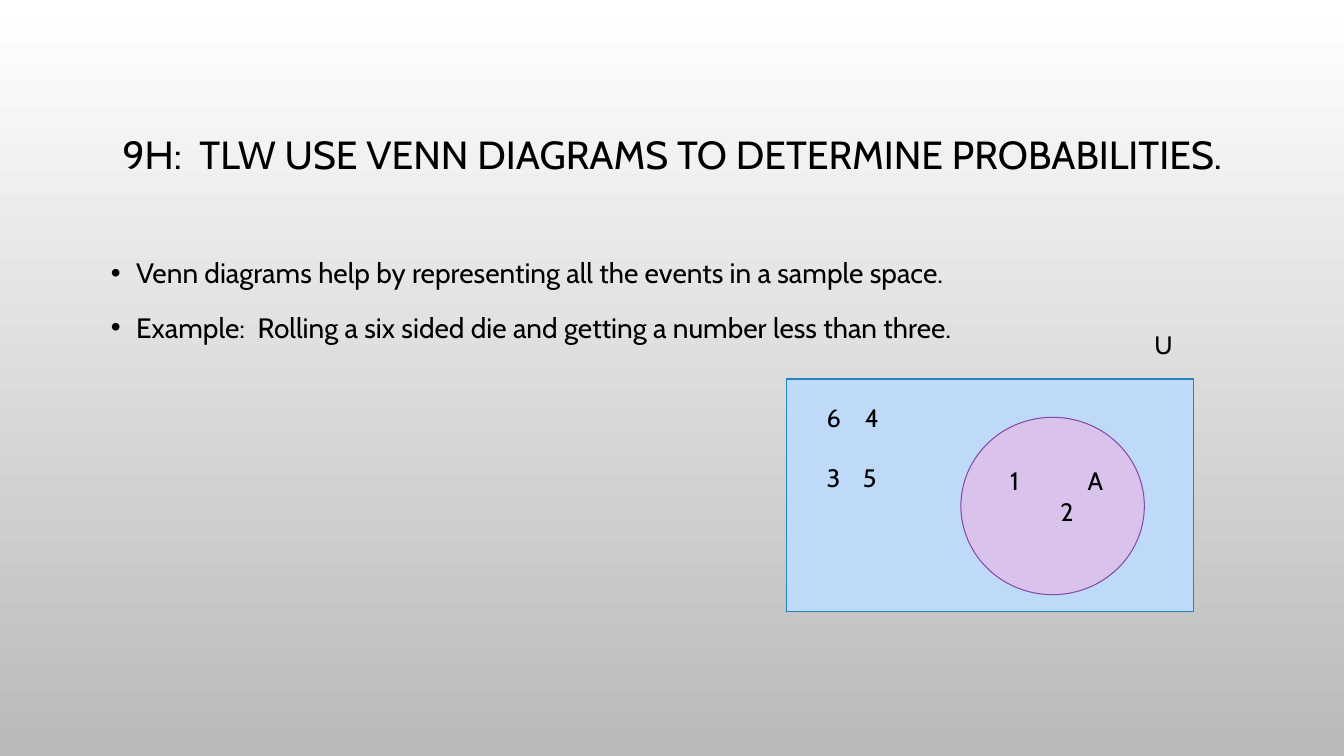
import pptx
import pptx.util
import pptx.dml.color
import pptx.enum.shapes
import pptx.enum.text
import pptx.oxml.ns
from lxml import etree

# Content
TITLE = "9H:  TLW USE VENN DIAGRAMS TO DETERMINE PROBABILITIES."
POINTS = [
    "Venn diagrams help by representing all the events in a sample space.",
    "Example:  Rolling a six sided die and getting a number less than three.",
]
FONT = "Cabin"
COLORS = {
    "text": "000000", "bg_top": "FFFFFF", "bg_bottom": "B9B9B9",
    "universe": "BFDAF9", "universe_line": "2683BF",
    "event": "D9C3EC", "event_line": "834AA7",
}
# Venn shapes: preset, box in inches, colour name
SETS = [
    ("RECTANGLE", (7.8, 3.76, 4.04, 2.31), "universe"),
    ("OVAL", (9.53, 4.14, 1.82, 1.76), "event"),
]
# Labels: box in inches, lines as (text, tab in inches, space before in points, first number)
LABELS = [
    ((8.1, 3.94, 2.67, 1.01), [("4", 0.38, 0, 6), ("3\t5", 0.36, 21.6, None)]),
    ((9.92, 4.57, 1.2, 0.71), [("1\tA", 0.77, 0, None), ("\t2", 0.5, 0, None)]),
    ((11.35, 3.22, 0.99, 0.4), [("U", None, 0, None)]),
]

Pt, Inches = pptx.util.Pt, pptx.util.Inches
ANCHOR = pptx.enum.text.MSO_ANCHOR
ALIGN = pptx.enum.text.PP_ALIGN


def rgb(name):
    return pptx.dml.color.RGBColor.from_string(COLORS[name])


def place(shape, box):
    shape.left, shape.top, shape.width, shape.height = map(Inches, box)


def add_child(parent, tag, **attrs):
    child = etree.SubElement(parent, pptx.oxml.ns.qn(tag))
    for key, value in attrs.items():
        child.set(key, str(value))
    return child


def indent(p, inches):
    pPr = p._p.get_or_add_pPr()
    pPr.set("marL", str(Inches(inches)))
    pPr.set("indent", str(-Inches(inches)))
    return pPr


def style(p, size):
    for r in p.runs:
        r.font.name, r.font.size = FONT, Pt(size)
        r.font.color.rgb = rgb("text")


# Slide and background
prs = pptx.Presentation()
prs.slide_width, prs.slide_height = Inches(13.33), Inches(7.5)
s = prs.slides.add_slide(prs.slide_layouts[1])
fill = s.background.fill
fill.gradient()
fill.gradient_angle = 270
for stop, name in zip(fill.gradient_stops, ("bg_top", "bg_bottom")):
    stop.color.rgb = rgb(name)

# Title
title, body = s.placeholders
place(title, (1, 0.68, 11.33, 1.75))
tf = title.text_frame
tf.text = TITLE
tf.auto_size = pptx.enum.text.MSO_AUTO_SIZE.NONE
tf.vertical_anchor = ANCHOR.MIDDLE
p = tf.paragraphs[0]
p.alignment, p.line_spacing = ALIGN.CENTER, 0.9
style(p, 28)

# Bulleted list
place(body, (1, 2.42, 11.33, 3.74))
tf = body.text_frame
tf.text = "\n".join(POINTS)
tf.auto_size = pptx.enum.text.MSO_AUTO_SIZE.NONE
for i, p in enumerate(tf.paragraphs):
    p.line_spacing, p.space_before = 1.2, Pt(10 if i else 0)
    pPr = indent(p, 0.25)
    add_child(add_child(pPr, "a:buClr"), "a:srgbClr", val=COLORS["text"])
    add_child(pPr, "a:buChar", char="•")
    style(p, 20)

# Venn sets
for preset, box, name in SETS:
    kind = getattr(pptx.enum.shapes.MSO_SHAPE, preset)
    sp = s.shapes.add_shape(kind, *map(Inches, box))
    sp.shadow.inherit = False
    sp.fill.solid()
    sp.fill.fore_color.rgb = rgb(name)
    sp.line.color.rgb = rgb(name + "_line")
    sp.line.width = Pt(0.75)

# Outcomes and set names
for box, lines in LABELS:
    tf = s.shapes.add_textbox(*map(Inches, box)).text_frame
    tf.word_wrap = True
    tf.text = "\n".join(line[0] for line in lines)
    for p, (text, tab, before, number) in zip(tf.paragraphs, lines):
        p.space_before = Pt(before)
        if number:
            add_child(indent(p, tab), "a:buAutoNum", type="arabicPlain", startAt=number)
        elif tab:
            tabs = add_child(p._p.get_or_add_pPr(), "a:tabLst")
            add_child(tabs, "a:tab", pos=Inches(tab), algn="l")
        style(p, 18)

prs.save("out.pptx")
